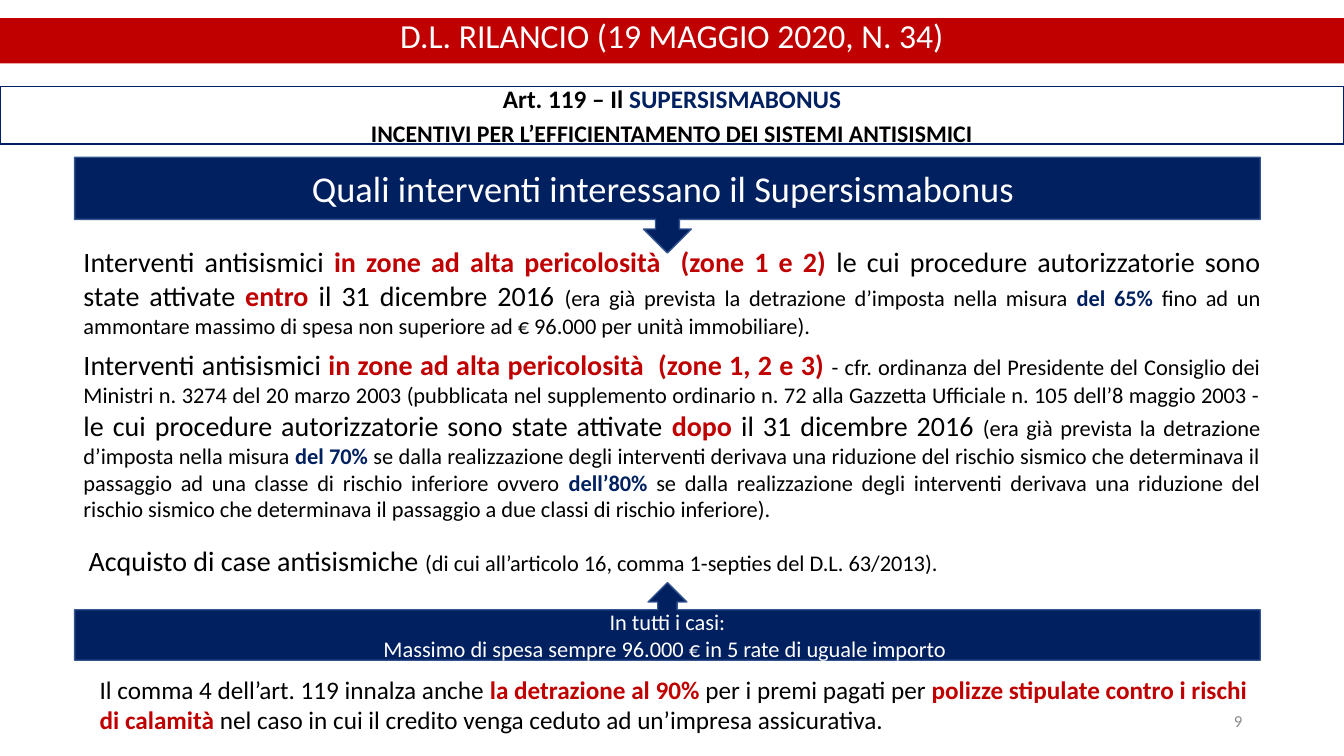
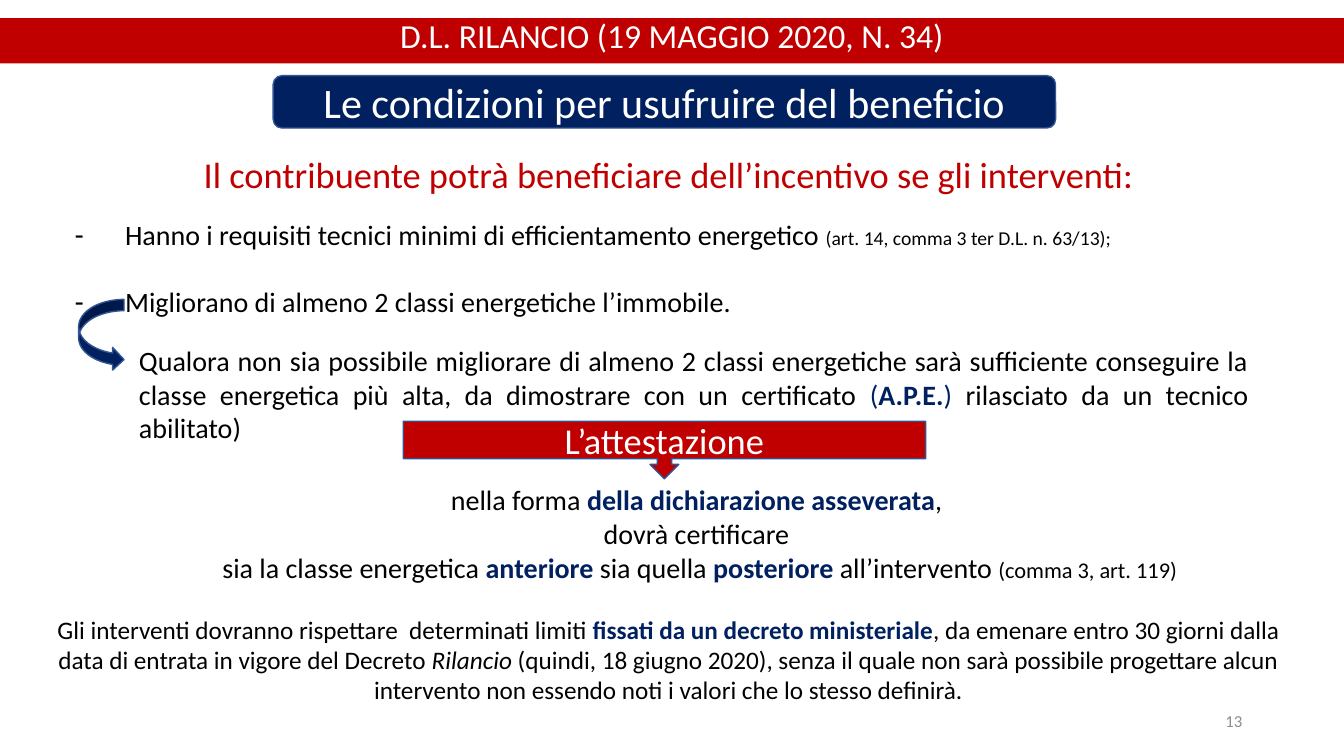
"""Builds two slides on the seismic and energy bonus rules."""
from dataclasses import dataclass

from lxml.etree import SubElement
from pptx import Presentation
from pptx.dml.color import RGBColor
from pptx.enum.shapes import MSO_SHAPE
from pptx.enum.text import MSO_ANCHOR, MSO_AUTO_SIZE, PP_ALIGN
from pptx.oxml.ns import qn
from pptx.util import Pt

PX = 9144
WIDE, HIGH = 1333, 750
LEFT, MID = PP_ALIGN.LEFT, PP_ALIGN.CENTER
RIGHT, JUST = PP_ALIGN.RIGHT, PP_ALIGN.JUSTIFY


@dataclass(frozen=True)
class Look:
    size: int
    color: str = "000000"
    bold: bool = False
    slant: bool = False


@dataclass(frozen=True)
class Theme:
    font: str = "Calibri"
    red: str = "C00000"
    navy: str = "002060"
    edge: str = "325491"
    white: str = "FFFFFF"
    band: Look = Look(24, "FFFFFF")
    grand: Look = Look(30, "FFFFFF")
    head: Look = Look(26, "FFFFFF")
    lure: Look = Look(26, "C00000")
    label: Look = Look(16, "FFFFFF")
    page: Look = Look(12, "8C8C8C")
    art: Look = Look(18, "000000", True)
    bonus: Look = Look(18, "002060", True)
    aim: Look = Look(17, "000000", True)
    lead: Look = Look(20)
    hot: Look = Look(20, "C00000", True)
    cool: Look = Look(20, "002060")
    key: Look = Look(20, "002060", True)
    note: Look = Look(16)
    rate: Look = Look(16, "002060", True)
    small: Look = Look(14)
    text: Look = Look(18)
    warn: Look = Look(18, "C00000", True)
    slant: Look = Look(18, "000000", False, True)


T = Theme()


def place(shape, area):
    shape.left, shape.top, shape.width, shape.height = (n * PX for n in area)


def paint(shape, fill, edge=None):
    shape.fill.solid()
    shape.fill.fore_color.rgb = RGBColor.from_string(fill)
    if edge:
        shape.line.color.rgb = RGBColor.from_string(edge)
        shape.line.width = Pt(1)


def style(run, look):
    font = run.font
    font.name, font.size = T.font, Pt(look.size)
    font.bold, font.italic = look.bold, look.slant
    font.color.rgb = RGBColor.from_string(look.color)


def write(shape, lines, align, anchor=MSO_ANCHOR.TOP, pitch=1.0, gap=0):
    frame = shape.text_frame
    frame.word_wrap = True
    frame.auto_size = MSO_AUTO_SIZE.NONE
    frame.vertical_anchor = anchor
    frame.text = "\n".join(line[0][0] for line in lines)
    for para, line in zip(frame.paragraphs, lines):
        para.alignment, para.line_spacing = align, pitch
        para.space_before = Pt(gap)
        for words, _ in line[1:]:
            para.add_run().text = words
        for run, (_, look) in zip(para.runs, line):
            style(run, look)


def note(slide, area, lines, align=JUST, anchor=MSO_ANCHOR.TOP):
    box = slide.shapes.add_textbox(*(n * PX for n in area))
    write(box, lines, align, anchor)


def block(slide, kind, area, fill, edge=T.edge):
    shape = slide.shapes.add_shape(kind, *(n * PX for n in area))
    shape.shadow.inherit = False
    paint(shape, fill, edge)
    return shape


def panel(slide, kind, area, fill, look, *lines):
    shape = block(slide, kind, area, fill)
    write(shape, [[(line, look)] for line in lines], MID, MSO_ANCHOR.MIDDLE)


def dashes(shape, area, lines, gap):
    place(shape, area)
    write(shape, lines, JUST)
    for spot, para in enumerate(shape.text_frame.paragraphs):
        para.space_before = Pt(gap if spot else 0)
        props = para._p.get_or_add_pPr()
        props.set("marL", str(50 * PX))
        props.set("indent", str(-50 * PX))
        SubElement(props, qn("a:buChar")).set("char", "-")


def start(deck, layout, page):
    slide = deck.slides.add_slide(deck.slide_layouts.get_by_name(layout))
    title = slide.shapes.title
    place(title, (0, 18, WIDE, 45))
    paint(title, T.red)
    write(title, [[("D.L. RILANCIO (19 MAGGIO 2020, N. 34)", T.band)]],
          MID, pitch=0.8, gap=10)
    note(slide, (942, 695, 300, 40), [[(page, T.page)]], RIGHT,
         MSO_ANCHOR.MIDDLE)
    return slide


def seismic(deck):
    slide = start(deck, "Title Only", "9")
    strip = block(slide, MSO_SHAPE.RECTANGLE, (0, 86, WIDE, 57),
                  T.white, T.navy)
    write(strip, [
        [("Art. 119 – Il ", T.art), ("SUPERSISMABONUS", T.bonus)],
        [("INCENTIVI PER L’EFFICIENTAMENTO DEI SISTEMI ANTISISMICI", T.aim)],
    ], MID, pitch=0.7, gap=10)
    note(slide, (73, 238, 1187, 104), [[
        ("Interventi antisismici ", T.lead),
        ("in zone ad alta pericolosità  (zone 1 e 2) ", T.hot),
        ("le cui procedure autorizzatorie sono state attivate ", T.lead),
        ("entro", T.hot),
        (" il 31 dicembre 2016 ", T.lead),
        ("(era già prevista la detrazione d’imposta nella misura ", T.note),
        ("del 65%", T.rate),
        (" fino ad un ammontare massimo di spesa non superiore ad "
         "€ 96.000 per unità immobiliare).", T.note),
    ]])
    note(slide, (73, 340, 1187, 185), [[
        ("Interventi antisismici ", T.lead),
        ("in zone ad alta pericolosità  (zone 1, 2 e 3) ", T.hot),
        ("- cfr. ordinanza del Presidente del Consiglio dei Ministri n. 3274 "
         "del 20 marzo 2003 (pubblicata nel supplemento ordinario n. 72 alla "
         "Gazzetta Ufficiale n. 105 dell’8 maggio 2003 - ", T.note),
        ("le cui procedure autorizzatorie sono state attivate ", T.lead),
        ("dopo", T.hot),
        (" il 31 dicembre 2016 ", T.lead),
        ("(era già prevista la detrazione d’imposta nella misura ", T.note),
        ("del 70% ", T.rate),
        ("se dalla realizzazione degli interventi derivava una riduzione del "
         "rischio sismico che determinava il passaggio ad una classe di "
         "rischio inferiore ovvero ", T.note),
        ("dell’80%", T.rate),
        (" se dalla realizzazione degli interventi derivava una riduzione del "
         "rischio sismico che determinava il passaggio a due classi di "
         "rischio inferiore).", T.note),
    ]])
    panel(slide, MSO_SHAPE.UP_ARROW_CALLOUT, (74, 578, 1176, 77), T.navy,
          T.label, "In tutti i casi:",
          "Massimo di spesa sempre 96.000 € in 5 rate di uguale importo ")
    panel(slide, MSO_SHAPE.DOWN_ARROW_CALLOUT, (74, 156, 1176, 95), T.navy,
          T.head, "Quali interventi interessano il Supersismabonus ")
    note(slide, (78, 534, 1169, 44), [[
        ("Acquisto di case antisismiche ", T.lead),
        ("(di cui all’articolo 16, comma 1-septies del D.L. 63/2013).",
         T.note),
    ]])
    note(slide, (89, 664, 1171, 71), [[
        ("Il comma 4 dell’art. 119 innalza anche ", T.text),
        ("la detrazione al 90% ", T.warn),
        ("per i premi pagati per ", T.text),
        ("polizze stipulate contro i rischi di calamità ", T.warn),
        ("nel caso in cui il credito venga ceduto ad un’impresa "
         "assicurativa.", T.text),
    ]], LEFT)


def terms(deck):
    slide = start(deck, "Title and Content", "13")
    dashes(slide.placeholders[1], (64, 211, 1169, 111), [
        [("Hanno i requisiti tecnici minimi di efficientamento energetico ",
          T.lead),
         ("(art. 14, comma 3 ter D.L. n. 63/13);", T.small)],
        [("Migliorano di almeno 2 classi energetiche l’immobile.", T.lead)],
    ], 24)
    panel(slide, MSO_SHAPE.ROUNDED_RECTANGLE, (271, 75, 776, 52), T.navy,
          T.grand, "Le condizioni per usufruire del beneficio")
    note(slide, (79, 146, 1169, 54), [[
        ("Il contribuente potrà beneficiare dell’incentivo se gli "
         "interventi:", T.lure),
    ]], MID)
    block(slide, MSO_SHAPE.CURVED_RIGHT_ARROW, (78, 297, 45, 71), T.navy)
    note(slide, (128, 336, 1120, 111), [[
        ("Qualora non sia possibile migliorare di almeno 2 classi energetiche "
         "sarà sufficiente conseguire la classe energetica più alta, da "
         "dimostrare con un certificato ", T.lead),
        ("(", T.cool),
        ("A.P.E.", T.key),
        (") ", T.cool),
        ("rilasciato da un tecnico abilitato)", T.lead),
    ]])
    panel(slide, MSO_SHAPE.DOWN_ARROW_CALLOUT, (400, 418, 518, 57), T.red,
          T.head, "L’attestazione")
    note(slide, (134, 474, 1120, 111), [
        [("nella forma ", T.lead),
         ("della dichiarazione asseverata", T.key),
         (", ", T.lead)],
        [("dovrà certificare ", T.lead)],
        [("sia la classe energetica ", T.lead),
         ("anteriore", T.key),
         (" sia quella ", T.lead),
         ("posteriore", T.key),
         (" all’intervento ", T.lead),
         ("(comma 3, art. 119)", T.note)],
    ], MID)
    note(slide, (42, 604, 1242, 101), [[
        ("Gli interventi dovranno rispettare  determinati limiti ", T.text),
        ("fissati da un decreto ministeriale", T.bonus),
        (", da emenare entro 30 giorni dalla data di entrata in vigore del "
         "Decreto ", T.text),
        ("Rilancio", T.slant),
        (" (quindi, 18 giugno 2020), senza il quale non sarà possibile "
         "progettare alcun intervento non essendo noti i valori che lo "
         "stesso definirà.", T.text),
    ]], MID)


def main():
    deck = Presentation()
    deck.slide_width, deck.slide_height = WIDE * PX, HIGH * PX
    seismic(deck)
    terms(deck)
    deck.save("out.pptx")


if __name__ == "__main__":
    main()
